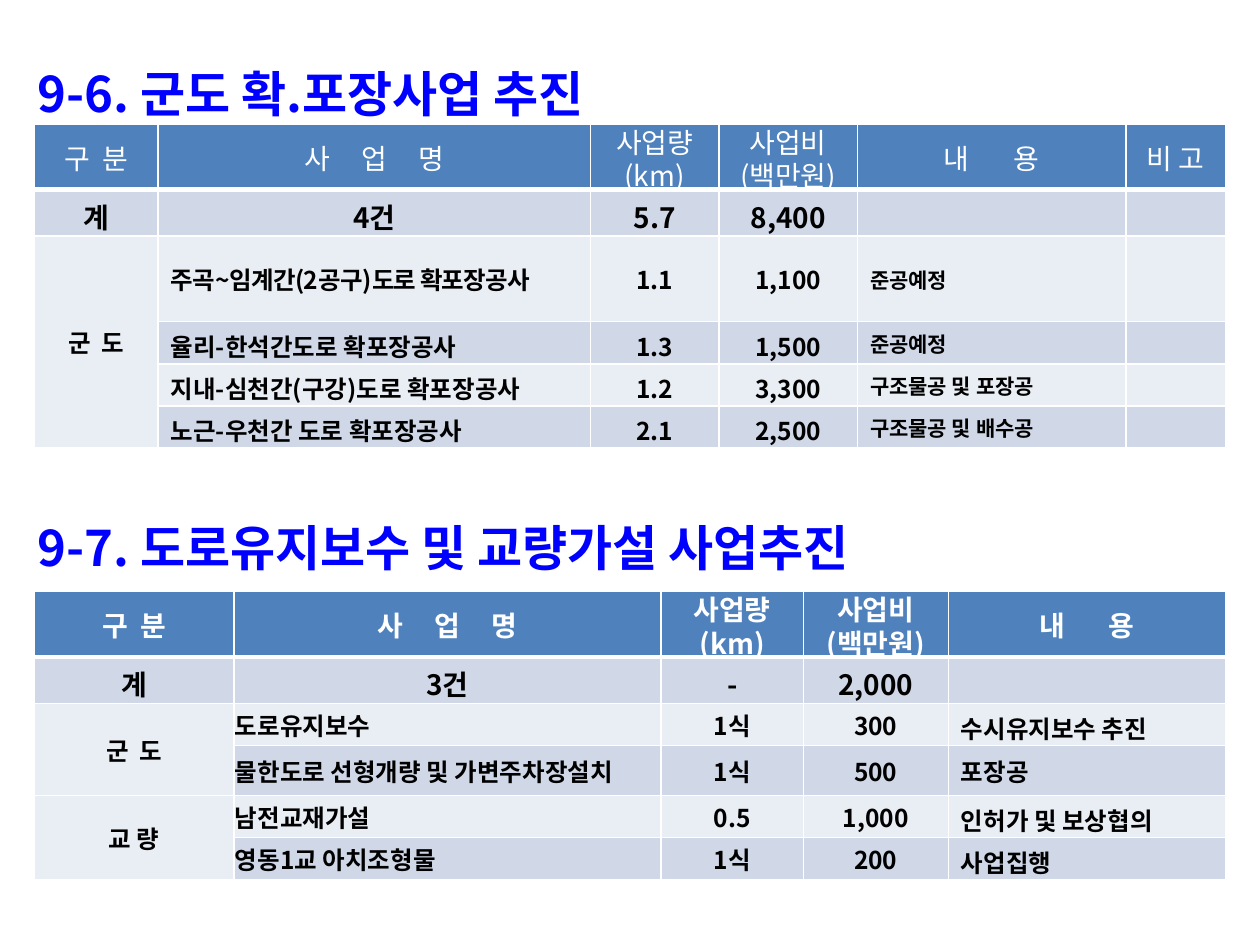
from lxml import etree
from pptx import Presentation
from pptx.dml.color import RGBColor
from pptx.enum.text import MSO_ANCHOR, PP_ALIGN
from pptx.oxml.ns import qn
from pptx.util import Pt

FONT, NOTE_FONT = "Noto Sans CJK KR", "Arial"
LEFT, CENTER = PP_ALIGN.LEFT, PP_ALIGN.CENTER
MIDDLE = MSO_ANCHOR.MIDDLE
WHITE, BLACK, BLUE = "FFFFFF", "000000", "0000FF"
HEADER_FILL, DARK_BAND, LIGHT_BAND = "4F81BD", "D0D8E8", "E9EDF4"
NORMAL_MARGINS = (7.2, 3.6, 7.2, 3.6)
TIGHT_MARGINS = (0.7, 0.7, 0.7, 0)

# Letter spacing, in points, of the labels that are spread out or tightened
LETTER_SPACING = {
    "구 분": 1.8, "군 도": 1.6, "사 업 명": 7.2, "내 용": 10.8,
    "주곡~임계간(2공구)도로 확포장공사": -0.5,
}

ROAD_ROWS = [
    ["구 분", "사 업 명", "사업량\n(km)", "사업비\n(백만원)", "내 용", "비 고"],
    ["계", "4건", "5.7", "8,400", "", ""],
    ["군 도", "주곡~임계간(2공구)도로 확포장공사", "1.1", "1,100", "준공예정", ""],
    ["", "율리-한석간도로 확포장공사", "1.3", "1,500", "준공예정", ""],
    ["", "지내-심천간(구강)도로 확포장공사", "1.2", "3,300", "구조물공 및 포장공", ""],
    ["", "노근-우천간 도로 확포장공사", "2.1", "2,500", "구조물공 및 배수공", ""],
]
BRIDGE_ROWS = [
    ["구 분", "사 업 명", "사업량\n(km)", "사업비\n(백만원)", "내 용"],
    ["계", "3건", "-", "2,000", ""],
    ["군 도", "도로유지보수", "1식", "300", "수시유지보수 추진"],
    ["", "물한도로 선형개량 및 가변주차장설치", "1식", "500", "포장공"],
    ["교 량", "남전교재가설", "0.5", "1,000", "인허가 및 보상협의"],
    ["", "영동1교 아치조형물", "1식", "200", "사업집행"],
]


def color(hex_string):
    return RGBColor.from_string(hex_string)


def format_run(run, size, hex_string, bold, font=FONT):
    run.font.size = Pt(size)
    run.font.bold = bold
    run.font.name = font
    run.font.color.rgb = color(hex_string)
    properties = run.font._element
    if font == FONT:
        etree.SubElement(properties, qn("a:ea"), typeface=font)
    if run.text in LETTER_SPACING:
        properties.set("spc", str(round(LETTER_SPACING[run.text] * 100)))


def add_borders(cell, bottom_width):
    properties = cell._tc.get_or_add_tcPr()
    for side, width in (("L", 1), ("R", 1), ("T", 1), ("B", bottom_width)):
        line = etree.SubElement(properties, qn("a:ln" + side), w=str(Pt(width)))
        fill = etree.SubElement(line, qn("a:solidFill"))
        etree.SubElement(fill, qn("a:srgbClr"), val=WHITE)


def add_heading(slide, text, left, top, width, height, line_spacing):
    text_frame = slide.shapes.add_textbox(
        Pt(left), Pt(top), Pt(width), Pt(height)).text_frame
    text_frame.word_wrap = True
    text_frame.text = text
    paragraph = text_frame.paragraphs[0]
    paragraph.line_spacing = line_spacing
    format_run(paragraph.runs[0], 28, BLUE, True)


def fill_cell(cell, text, size, hex_string, bold, align, font, margins):
    cell.vertical_anchor = MIDDLE
    (cell.margin_left, cell.margin_top,
     cell.margin_right, cell.margin_bottom) = map(Pt, margins)
    cell.text_frame.text = text
    paragraphs = cell.text_frame.paragraphs
    for index, paragraph in enumerate(paragraphs):
        paragraph.alignment = align
        if len(paragraphs) > 1:
            paragraph.line_spacing = 0.7
        if index:
            paragraph.space_before = Pt(size * 0.2)
        if not paragraph.runs:
            paragraph.font.size = Pt(size)
        for run in paragraph.runs:
            format_run(run, size, hex_string, bold, font)


def add_project_table(slide, rows, left, top, widths, heights, groups,
                      header_bold, note_size, note_font, body_margins):
    """Header, total row and banded body; groups lists (first, last) merged rows."""
    table = slide.shapes.add_table(
        len(rows), len(widths), Pt(left), Pt(top),
        Pt(sum(widths)), Pt(sum(heights))).table
    table.first_row = table.horz_banding = False
    for column, width in zip(table.columns, widths):
        column.width = Pt(width)
    for row, height in zip(table.rows, heights):
        row.height = Pt(height)
    for row_index, values in enumerate(rows):
        header, body = row_index == 0, row_index > 1
        band = HEADER_FILL if header else DARK_BAND if row_index % 2 else LIGHT_BAND
        for column_index, text in enumerate(values):
            cell = table.cell(row_index, column_index)
            add_borders(cell, 3 if header else 1)
            cell.fill.solid()
            cell.fill.fore_color.rgb = color(LIGHT_BAND if body and column_index == 0 else band)
            note = body and column_index >= 4
            size = note_size if note else 14 if body else 16
            fill_cell(cell, text, size if text else 12,
                      WHITE if header else BLACK,
                      header_bold if header else True,
                      LEFT if body and column_index in (1, 4) else CENTER,
                      note_font if note else FONT,
                      body_margins if body and column_index in (1, 2, 3) else NORMAL_MARGINS)
    for first, last in groups:
        table.cell(first, 0).merge(table.cell(last, 0))


def main():
    presentation = Presentation()
    presentation.slide_width, presentation.slide_height = Pt(720), Pt(540)
    slide = presentation.slides.add_slide(presentation.slide_layouts[6])
    add_heading(slide, "9-6. 군도 확.포장사업 추진", 14.4, 26, 702.7, 48, 1.2)
    add_project_table(
        slide, ROAD_ROWS, 19.8, 71, [70.6, 247, 73.4, 79.2, 153.4, 56.9],
        [37.4, 26.6, 48.8, 24.1, 24.1, 24.1], [(2, 5)],
        False, 12, NOTE_FONT, NORMAL_MARGINS)
    add_heading(slide, "9-7. 도로유지보수 및 교량가설 사업추진", 14.4, 292.3, 702.7, 44, 1)
    add_project_table(
        slide, BRIDGE_ROWS, 19.8, 338, [113.8, 244.1, 81.4, 82.8, 158.4],
        [37.4, 26.6, 24.1, 28.4, 24.1, 24.1], [(2, 3), (4, 5)],
        True, 14, FONT, TIGHT_MARGINS)
    presentation.save("out.pptx")


if __name__ == "__main__":
    main()
